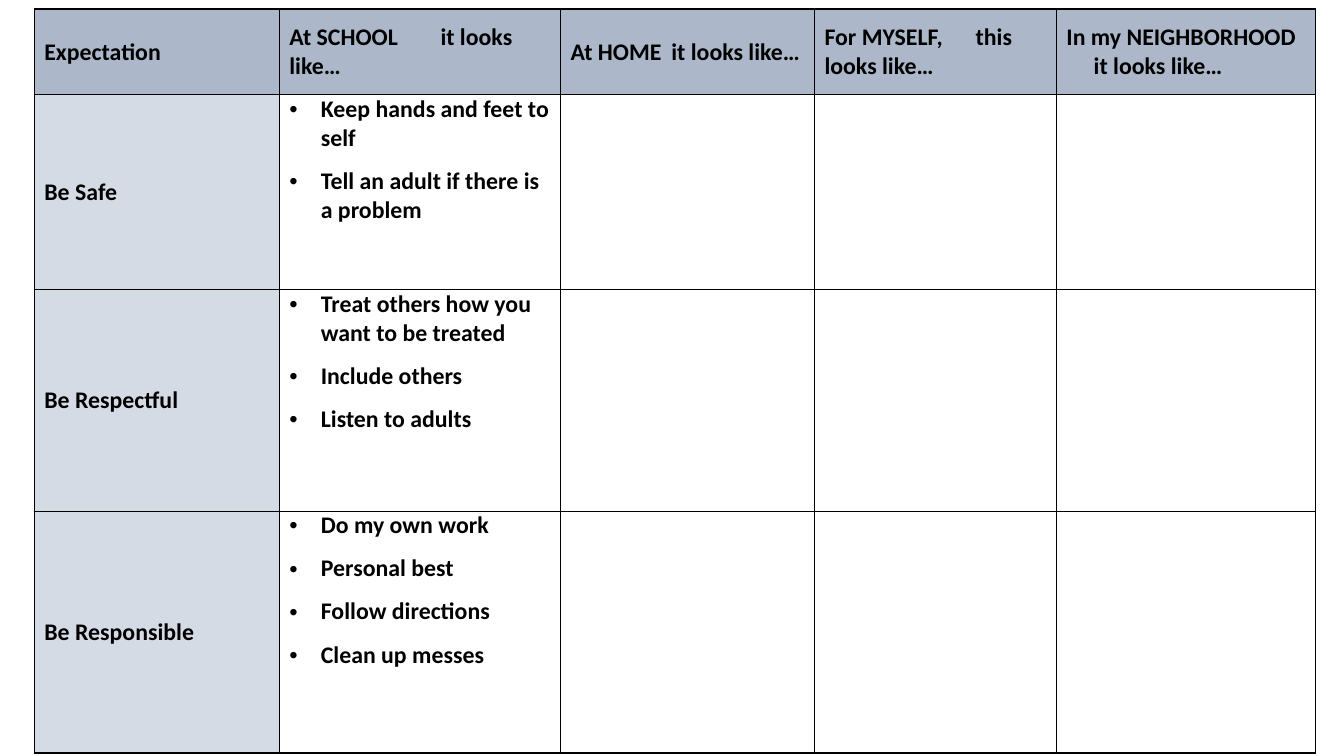
from lxml.etree import SubElement as Sub
from pptx import Presentation
from pptx.dml.color import RGBColor as RGB
from pptx.enum.text import MSO_ANCHOR as ANCHOR
from pptx.oxml import parse_xml
from pptx.oxml.ns import nsdecls, qn
from pptx.util import Pt

BLACK = RGB(0x00, 0x00, 0x00)
WHITE = RGB(0xFF, 0xFF, 0xFF)
HEAD = RGB(0xAC, 0xB8, 0xCA)
SIDE = RGB(0xD5, 0xDB, 0xE5)

WIDTHS = [175, 200.9, 181.4, 172.8, 185]
HEIGHTS = [61.2, 139, 158.4, 172.8]

# Header text, tab stop, hanging indent
HEADS = [
    ("Expectation", 0, 0),
    ("At SCHOOL\tit looks like…", 127.5, 0),
    ("At HOME\tit looks like…", 134.5, 0),
    ("For MYSELF,\tthis looks like…", 100, 0),
    ("In my NEIGHBORHOOD it looks like…", 0, 19.5),
]
RULES = [
    ("Be Safe", ["Keep hands and feet to self",
                 "Tell an adult if there is a problem"]),
    ("Be Respectful", ["Treat others how you want to be treated",
                       "Include others", "Listen to adults"]),
    ("Be Responsible", ["Do my own work", "Personal best",
                        "Follow directions", "Clean up messes"]),
]


def write(para, text, indent=0, tab=0, before=0, bullet=False):
    run = para.add_run()
    run.text = text
    font = run.font
    font.name, font.size, font.bold = "Calibri", Pt(17), True
    font.color.rgb = BLACK
    para.space_before = Pt(before)
    props = para._p.get_or_add_pPr()
    props.set("marL", str(Pt(indent)))
    props.set("indent", str(-Pt(indent)))
    if bullet:
        color = Sub(props, qn("a:buClr"))
        Sub(color, qn("a:srgbClr"), val=str(BLACK))
        Sub(props, qn("a:buFont"), typeface="Arial")
        Sub(props, qn("a:buChar"), char="•")
    if tab:
        stops = Sub(props, qn("a:tabLst"))
        Sub(stops, qn("a:tab"), pos=str(Pt(tab)), algn="l")


def style(cell, fill):
    cell.fill.solid()
    cell.fill.fore_color.rgb = fill
    cell.margin_left = cell.margin_right = Pt(7.2)
    cell.margin_top = cell.margin_bottom = 0
    props = cell._tc.get_or_add_tcPr()
    for spot, side in enumerate("LRTB"):
        props.insert(spot, parse_xml(
            f'<a:ln{side} {nsdecls("a")} w="{Pt(1)}"><a:solidFill>'
            f'<a:srgbClr val="{BLACK}"/></a:solidFill></a:ln{side}>'))


# Slide
deck = Presentation()
deck.slide_width, deck.slide_height = Pt(960), Pt(540)
slide = deck.slides.add_slide(deck.slide_layouts[6])

# Table frame
frame = slide.shapes.add_table(len(HEIGHTS), len(WIDTHS), Pt(24.5), Pt(6.5),
                               Pt(sum(WIDTHS)), Pt(sum(HEIGHTS)))
table = frame.table
table.first_row = table.horz_banding = False
for col, width in zip(table.columns, WIDTHS):
    col.width = Pt(width)
for row, height in zip(table.rows, HEIGHTS):
    row.height = Pt(height)

# Fills and borders
for r in range(len(HEIGHTS)):
    for c in range(len(WIDTHS)):
        style(table.cell(r, c), HEAD if r == 0 else SIDE if c == 0 else WHITE)

# Header row
for c, (text, tab, indent) in enumerate(HEADS):
    cell = table.cell(0, c)
    cell.vertical_anchor = ANCHOR.MIDDLE
    write(cell.text_frame.paragraphs[0], text, tab=tab, indent=indent)

# Expectations and school examples
for r, (name, items) in enumerate(RULES, 1):
    cell = table.cell(r, 0)
    cell.vertical_anchor = ANCHOR.MIDDLE
    write(cell.text_frame.paragraphs[0], name)
    body = table.cell(r, 1).text_frame
    for i, item in enumerate(items):
        para = body.add_paragraph() if i else body.paragraphs[0]
        write(para, item, indent=22.5, before=10 if i else 0, bullet=True)

deck.save("out.pptx")
